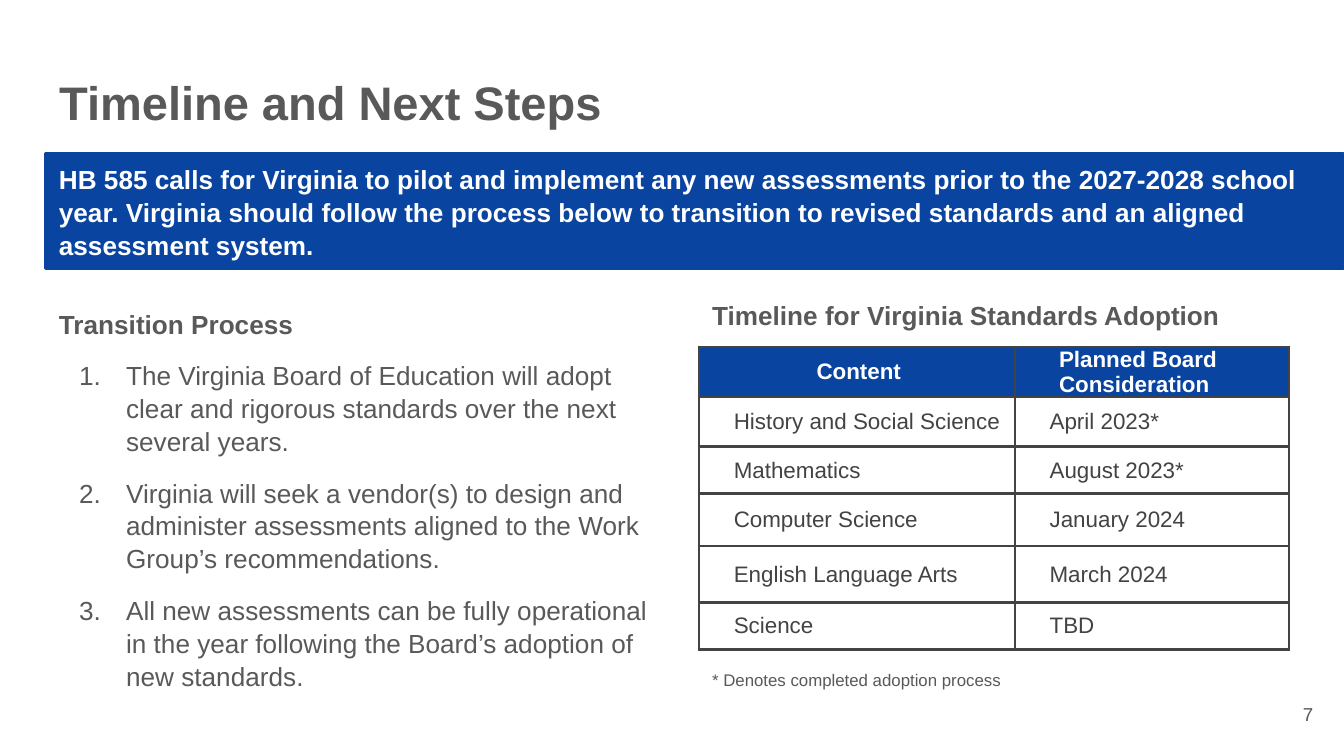
from pptx import Presentation
from pptx.dml.color import RGBColor
from pptx.enum.shapes import MSO_SHAPE
from pptx.enum.text import MSO_ANCHOR, MSO_AUTO_SIZE, PP_ALIGN
from pptx.oxml import parse_xml
from pptx.oxml.ns import nsdecls
from pptx.util import Inches, Pt

RECTANGLE = MSO_SHAPE.RECTANGLE
TOP, MIDDLE = MSO_ANCHOR.TOP, MSO_ANCHOR.MIDDLE
LEFT, CENTER, RIGHT = PP_ALIGN.LEFT, PP_ALIGN.CENTER, PP_ALIGN.RIGHT
NO_FIT, GROW = MSO_AUTO_SIZE.NONE, MSO_AUTO_SIZE.SHAPE_TO_FIT_TEXT

COLORS = {"blue": "0944A1", "text": "595959", "cell": "434343", "white": "FFFFFF"}

PROCESS_STEPS = [
    "The Virginia Board of Education will adopt clear and rigorous standards over the next several years.",
    "Virginia will seek a vendor(s) to design and administer assessments aligned to the Work Group’s recommendations.",
    "All new assessments can be fully operational in the year following the Board’s adoption of new standards.",
]
ADOPTION_ROWS = [
    ("Content", "Planned Board Consideration"),
    ("History and Social Science", "April 2023*"),
    ("Mathematics", "August 2023*"),
    ("Computer Science", "January 2024"),
    ("English Language Arts", "March 2024"),
    ("Science", "TBD"),
]


class SlideBuilder:
    font = "Arial"

    def __init__(self, page):
        self.page = page

    def color(self, name):
        return RGBColor.from_string(COLORS[name])

    def format_para(self, para, size, color="text", bold=False, align=LEFT, spacing=None):
        para.font.name = self.font
        para.font.size = Pt(size)
        para.font.bold = bold
        para.font.color.rgb = self.color(color)
        para.alignment = align
        if spacing:
            para.line_spacing = spacing

    def fill_frame(self, frame, text, size, anchor=TOP, fit=NO_FIT, **style):
        frame.word_wrap = True
        frame.auto_size = fit
        frame.vertical_anchor = anchor
        frame.margin_left = frame.margin_right = Inches(0.1)
        frame.margin_top = frame.margin_bottom = Inches(0.1)
        frame.text = text
        self.format_para(frame.paragraphs[0], size, **style)

    def title(self, text, left, top, width, height):
        box = self.page.shapes.title
        box.left, box.top = Inches(left), Inches(top)
        box.width, box.height = Inches(width), Inches(height)
        self.fill_frame(box.text_frame, text, 25.2, bold=True)

    def text(self, text, left, top, width, height, size, **style):
        box = self.page.shapes.add_textbox(
            Inches(left), Inches(top), Inches(width), Inches(height))
        self.fill_frame(box.text_frame, text, size, **style)
        return box

    def banner(self, text, left, top, width, height):
        box = self.page.shapes.add_shape(
            RECTANGLE, Inches(left), Inches(top), Inches(width), Inches(height))
        box.shadow.inherit = False
        box.fill.solid()
        box.fill.fore_color.rgb = self.color("blue")
        box.line.color.rgb = self.color("blue")
        box.line.width = Pt(1.5)
        self.fill_frame(box.text_frame, text, 14, anchor=MIDDLE,
                        color="white", bold=True, spacing=1.05)

    def numbered_list(self, heading, items, left, top, width, height):
        box = self.text(heading, left, top, width, height, 14, bold=True, spacing=1.05)
        for item in items:
            para = box.text_frame.add_paragraph()
            para.text = item
            self.format_para(para, 14, spacing=1.05)
            para.space_before = Pt(10)
            self.number(para)
        para.space_after = Pt(10)

    def number(self, para):
        properties = para._p.get_or_add_pPr()
        properties.set("marL", str(Inches(0.5)))
        properties.set("indent", str(Inches(-0.35)))
        defaults = properties.find("{*}defRPr")
        for markup in (
            f'<a:buClr {nsdecls("a")}><a:srgbClr val="{COLORS["text"]}"/></a:buClr>',
            f'<a:buFont {nsdecls("a")} typeface="{self.font}"/>',
            f'<a:buAutoNum {nsdecls("a")} type="arabicPeriod"/>',
        ):
            defaults.addprevious(parse_xml(markup))

    def table(self, rows, left, top, widths, heights):
        table = self.page.shapes.add_table(
            len(rows), len(widths), Inches(left), Inches(top),
            Inches(sum(widths)), Inches(sum(heights))).table
        for column, width in zip(table.columns, widths):
            column.width = Inches(width)
        for row, height in zip(table.rows, heights):
            row.height = Inches(height)
        for r, values in enumerate(rows):
            for c, value in enumerate(values):
                self.cell(table.cell(r, c), value, header=r == 0,
                          align=CENTER if r == c == 0 else LEFT)

    def cell(self, cell, text, header, align):
        cell.text = text
        cell.vertical_anchor = MIDDLE
        cell.margin_left = cell.margin_right = Inches(0.07 if header else 0.1)
        cell.margin_top = cell.margin_bottom = 0
        para = cell.text_frame.paragraphs[0]
        self.format_para(para, 12, "white" if header else "cell", header, align)
        indents = para._p.get_or_add_pPr()
        indents.set("marL", str(Inches(0.26 if header else 0.16)))
        if align == CENTER:
            indents.set("marR", str(Inches(0.23)))
        properties = cell._tc.get_or_add_tcPr()
        for side in ("lnL", "lnR", "lnT", "lnB"):
            properties.append(parse_xml(
                f'<a:{side} {nsdecls("a")} w="{Pt(1.5)}"><a:solidFill>'
                f'<a:srgbClr val="{COLORS["cell"]}"/></a:solidFill></a:{side}>'))
        if header:
            cell.fill.solid()
            cell.fill.fore_color.rgb = self.color("blue")
        else:
            cell.fill.background()


def main():
    deck = Presentation()
    deck.slide_width = Inches(10)
    deck.slide_height = deck.slide_width * 9 // 16
    title_only = deck.slide_layouts[5]
    builder = SlideBuilder(deck.slides.add_slide(title_only))

    builder.numbered_list("Transition Process", PROCESS_STEPS, 0.34, 2.18, 4.66, 3.35)
    builder.title("Timeline and Next Steps", 0.34, 0.45, 9.32, 0.63)
    builder.table(ADOPTION_ROWS, 5.2, 2.58, [2.35, 2.04],
                  [0.35, 0.37, 0.35, 0.39, 0.42, 0.35])
    builder.text("Timeline for Virginia Standards Adoption", 5.2, 2.05, 4.38, 0.56, 14,
                 anchor=MIDDLE, bold=True, spacing=1.15)
    builder.banner(
        "HB 585 calls for Virginia to pilot and implement any new assessments prior to "
        "the 2027-2028 school year. Virginia should follow the process below to transition "
        "to revised standards and an aligned assessment system.",
        0.34, 1.14, 9.66, 0.86)
    builder.text("* Denotes completed adoption process", 5.2, 4.87, 3.28, 0.35, 9,
                 fit=GROW, spacing=1.15)
    builder.text("7", 9.27, 5.1, 0.6, 0.43, 10, anchor=MIDDLE, align=RIGHT)
    deck.save("out.pptx")


if __name__ == "__main__":
    main()
